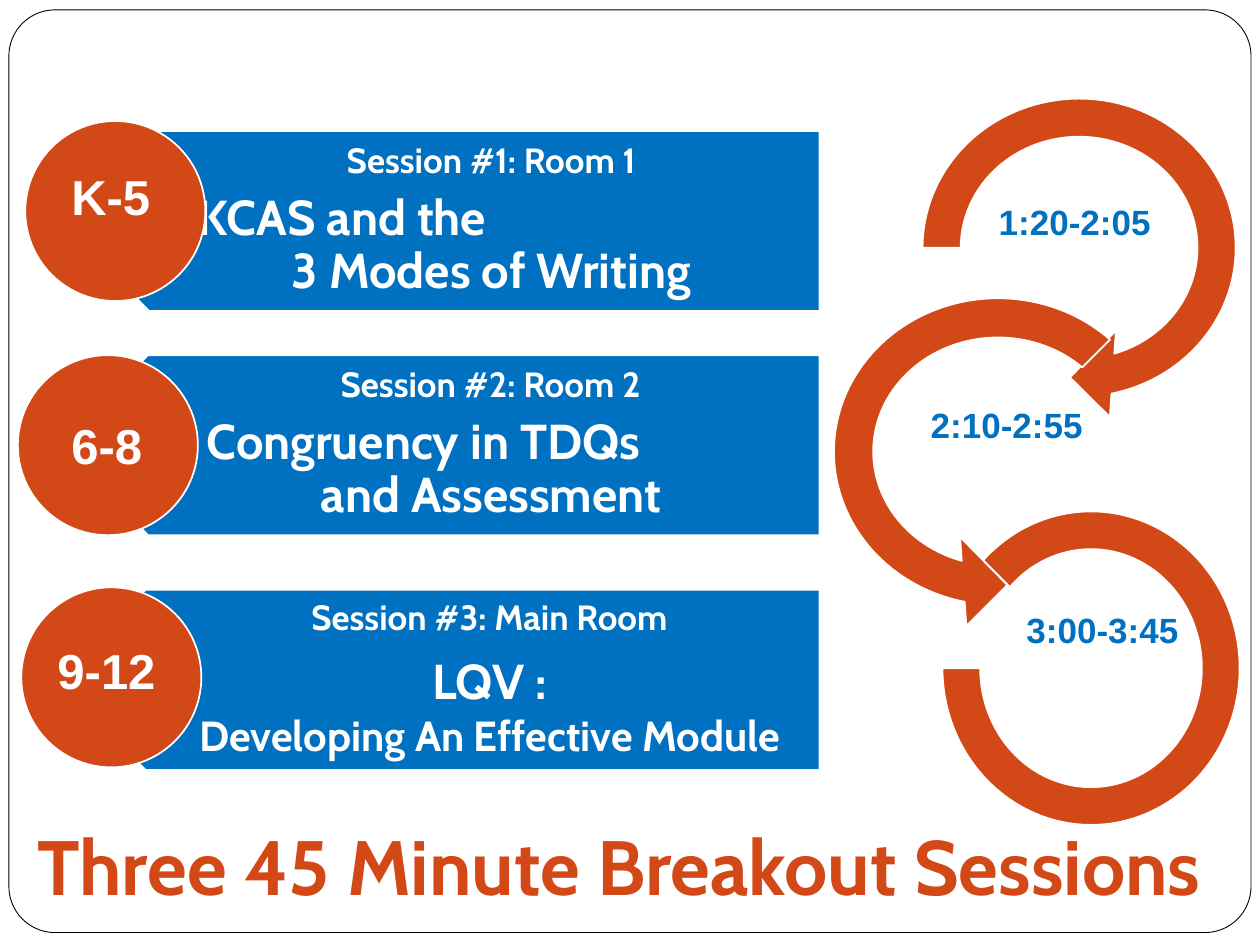
from pptx import Presentation
from pptx.dml.color import RGBColor
from pptx.enum import shapes, text
from pptx.util import Cm, Pt

ORANGE, BLUE, WHITE, BLACK = "D34817", "0070C0", "FFFFFF", "000000"
BAR_HEIGHT = 3.63
LEFT, CENTER = text.PP_ALIGN.LEFT, text.PP_ALIGN.CENTER
KINDS = shapes.MSO_SHAPE

SESSIONS = [
    (1.19, 2.64, 0.51, 2.44, [
        ("Session #1: Room 1", 20, CENTER, 0, 0.9, 7),
        ("KCAS and the", 28, LEFT, 0.3, 0.9, 0),
        ("3 Modes of Writing", 28, CENTER, 0, 0.9, 0)]),
    (1.17, 7.16, 0.36, 7.16, [
        ("Session #2: Room 2", 20, CENTER, 0, 0.9, 7),
        ("Congruency in TDQs", 28, LEFT, 0.5, 0.9, 0),
        ("and Assessment", 28, CENTER, 0, 0.9, 0)]),
    (1.12, 11.89, 0.43, 11.84, [
        ("Session #3: Main Room", 20, CENTER, 0, 0.9, 7),
        ("LQV :", 28, CENTER, 0, 1, 0),
        ("Developing An Effective Module", 24, CENTER, 0, 1, 0)]),
]
GRADES = [("K-5", 1.19, 3.23, 2.13), ("6-8", 1.19, 8.26, 1.96),
          ("9-12", 0.91, 12.78, 2.51)]
TIMES = [("1:20-2:05", 19.86, 3.91), ("2:10-2:55", 18.49, 8),
         ("3:00-3:45", 20.42, 12.14)]
ARROWS = [
    (KINDS.CIRCULAR_ARROW, (18.11, 1.5, 7.29, 6.99), (0.11, 11.42, 45, 108, 0.125)),
    (KINDS.LEFT_CIRCULAR_ARROW, (16.31, 5.51, 7.62, 7.19), (0.11, 11.42, 63, 189, 0.125)),
    (KINDS.BLOCK_ARC, (19, 10.31, 5.99, 6.32), (135, 108, 0.127)),
]


def color(value):
    return RGBColor.from_string(value)


def add_figure(slide, kind, box, fill, line=WHITE, weight=1, adjustments=()):
    figure = slide.shapes.add_shape(kind, *map(Cm, box))
    figure.shadow.inherit = False
    if fill:
        figure.fill.solid()
        figure.fill.fore_color.rgb = color(fill)
    else:
        figure.fill.background()
    figure.line.color.rgb = color(line)
    figure.line.width = Pt(weight)
    for index, value in enumerate(adjustments):
        figure.adjustments[index] = value
    return figure


def format_line(paragraph, size, font, fill, align):
    paragraph.alignment = align
    for run in paragraph.runs:
        run.font.size = Pt(size)
        run.font.name = font
        run.font.bold = True
        run.font.color.rgb = color(fill)


def set_margins(frame, left, top, right, bottom):
    frame.margin_left, frame.margin_top = Cm(left), Cm(top)
    frame.margin_right, frame.margin_bottom = Cm(right), Cm(bottom)


def add_label(slide, wording, box, size, fill, align):
    frame = slide.shapes.add_textbox(*map(Cm, box)).text_frame
    frame.word_wrap = False
    frame.auto_size = text.MSO_AUTO_SIZE.SHAPE_TO_FIT_TEXT
    frame.text = wording
    format_line(frame.paragraphs[0], size, "Arial", fill, align)


def add_session(slide, bar_left, bar_top, circle_left, circle_top, lines):
    bar_width = 16.52 - bar_left
    bar = add_figure(slide, KINDS.PENTAGON,
                     (bar_left, bar_top, bar_width, BAR_HEIGHT), BLUE)
    bar.rotation = 180
    box = (bar_left + 0.9, bar_top, bar_width - 0.9, BAR_HEIGHT)
    frame = slide.shapes.add_textbox(*map(Cm, box)).text_frame
    frame.word_wrap = True
    frame.vertical_anchor = text.MSO_ANCHOR.MIDDLE
    set_margins(frame, 1.6, 0.2, 0.4, 0.2)
    frame.text = "\n".join(line[0] for line in lines)
    for paragraph, (_, size, align, indent, spacing, after) in zip(frame.paragraphs, lines):
        format_line(paragraph, size, "Cabin", WHITE, align)
        paragraph.line_spacing = spacing
        paragraph.space_after = Pt(after)
        if indent:
            paragraph._p.get_or_add_pPr().set("marL", str(Cm(indent)))
    add_figure(slide, KINDS.OVAL, (circle_left, circle_top, BAR_HEIGHT, BAR_HEIGHT), ORANGE)


def set_title(slide, wording):
    title = slide.shapes.title
    title.left, title.top, title.width, title.height = map(Cm, (0.23, 15.44, 24.51, 3.18))
    frame = title.text_frame
    frame.text = wording
    frame.word_wrap = True
    frame.auto_size = text.MSO_AUTO_SIZE.NONE
    frame.vertical_anchor = text.MSO_ANCHOR.BOTTOM
    set_margins(frame, 0.25, 0.13, 0.25, 0.25)
    format_line(frame.paragraphs[0], 44, "Cabin", ORANGE, CENTER)


def main():
    deck = Presentation()
    deck.slide_width, deck.slide_height = Cm(25.4), Cm(19.05)
    slide = deck.slides.add_slide(deck.slide_layouts[5])
    set_title(slide, "Three 45 Minute Breakout Sessions")
    add_figure(slide, KINDS.ROUNDED_RECTANGLE, (0.18, 0.2, 25.04, 18.6),
               None, BLACK, 0.5, (0.05,))
    for session in SESSIONS:
        add_session(slide, *session)
    for grade, left, top, width in GRADES:
        add_label(slide, grade, (left, top, width, 1.45), 28, WHITE, LEFT)
    for time, left, top in TIMES:
        add_label(slide, time, (left, top, 3.61, 1.12), 20, BLUE, CENTER)
    for kind, box, adjustments in ARROWS:
        add_figure(slide, kind, box, ORANGE, adjustments=adjustments)
    deck.save("out.pptx")


if __name__ == "__main__":
    main()
